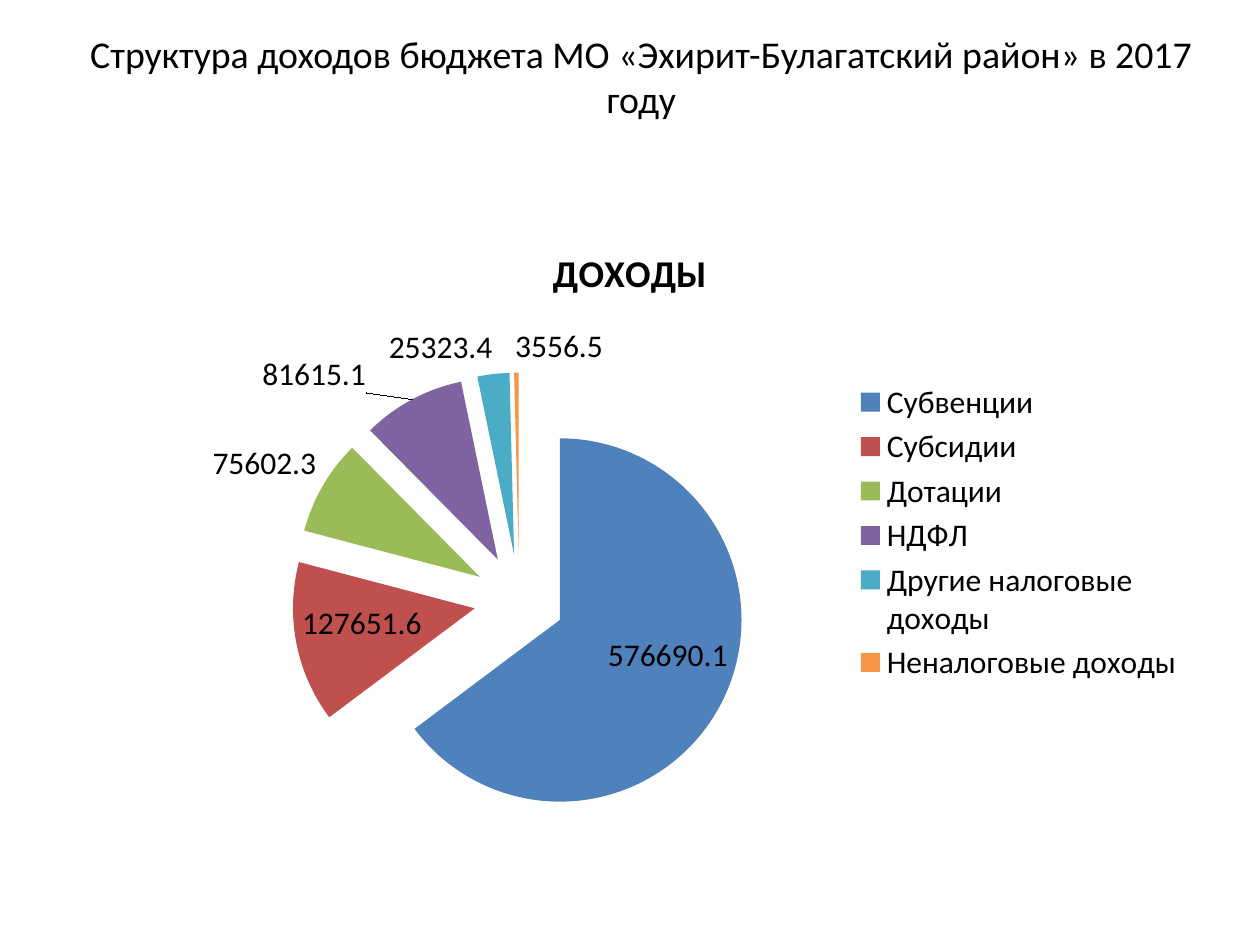
"""Build a slide with an exploded pie chart of district budget revenues."""
from lxml import etree
from pptx import Presentation
from pptx.chart.data import CategoryChartData
from pptx.dml.color import RGBColor
from pptx.enum.chart import XL_CHART_TYPE, XL_LABEL_POSITION, XL_LEGEND_POSITION
from pptx.enum.text import MSO_ANCHOR, PP_ALIGN
from pptx.oxml.ns import qn
from pptx.util import Inches, Pt

PIE = XL_CHART_TYPE.PIE_EXPLODED
BEST_FIT = XL_LABEL_POSITION.BEST_FIT
RIGHT = XL_LEGEND_POSITION.RIGHT
MIDDLE = MSO_ANCHOR.MIDDLE
CENTER = PP_ALIGN.CENTER

FONT = "Calibri"
BLACK = RGBColor(0x00, 0x00, 0x00)
REVENUES = [
    ("Субвенции", 576690.1, RGBColor(0x4F, 0x81, 0xBD)),
    ("Субсидии", 127651.6, RGBColor(0xC0, 0x50, 0x4D)),
    ("Дотации", 75602.3, RGBColor(0x9B, 0xBB, 0x59)),
    ("НДФЛ", 81615.1, RGBColor(0x80, 0x64, 0xA2)),
    ("Другие налоговые доходы", 25323.4, RGBColor(0x4B, 0xAC, 0xC6)),
    ("Неналоговые доходы", 3556.5, RGBColor(0xF7, 0x96, 0x46)),
]


def style(font, size, bold=False):
    font.name = FONT
    font.size = Pt(size)
    font.bold = bold
    font.color.rgb = BLACK


prs = Presentation()
prs.slide_width, prs.slide_height = Inches(10), Inches(7.5)
s = prs.slides.add_slide(prs.slide_layouts[5])

title = s.shapes.title
title.left, title.top = Inches(0.59), Inches(0.21)
title.width, title.height = Inches(9), Inches(0.79)
tf = title.text_frame
tf.word_wrap = True
tf.vertical_anchor = MIDDLE
p = tf.paragraphs[0]
p.alignment = CENTER
r = p.add_run()
r.text = "Структура доходов бюджета МО «Эхирит-Булагатский район» в 2017 году"
style(r.font, 21.6)

data = CategoryChartData(number_format="General")
data.categories = [name for name, _, _ in REVENUES]
data.add_series("ДОХОДЫ", [value for _, value, _ in REVENUES])
chart = s.shapes.add_chart(
    PIE, Inches(0.5), Inches(1.75), Inches(9), Inches(4.95), data
).chart
style(chart.font, 18)

chart.has_title = True
p = chart.chart_title.text_frame.paragraphs[0]
r = p.add_run()
r.text = "ДОХОДЫ"
style(r.font, 21.6, bold=True)
chart.chart_title.include_in_layout = False

chart.has_legend = True
chart.legend.position = RIGHT
chart.legend.include_in_layout = False
style(chart.legend.font, 18)

plot = chart.plots[0]
plot.vary_by_categories = True
series = plot.series[0]
for i, (_, _, color) in enumerate(REVENUES):
    fill = series.points[i].format.fill
    fill.solid()
    fill.fore_color.rgb = color
for explosion in series._element.iter(qn("c:explosion")):
    explosion.set("val", "25")

labels = series.data_labels
labels.show_value = True
labels.position = BEST_FIT
style(labels.font, 18)
leader = labels._element.find(qn("c:showLeaderLines"))
if leader is None:
    leader = etree.SubElement(labels._element, qn("c:showLeaderLines"))
leader.set("val", "1")

prs.save("out.pptx")
